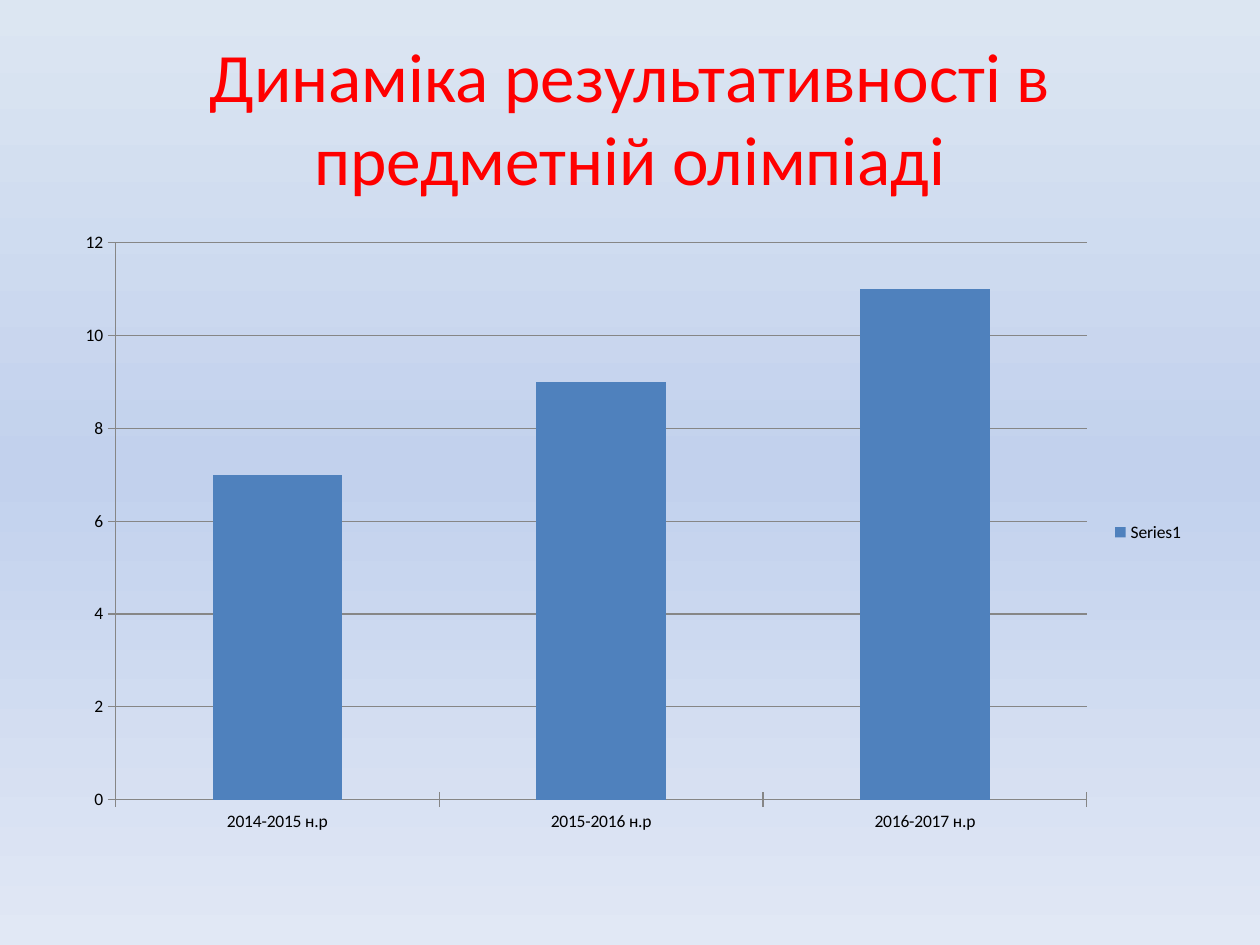
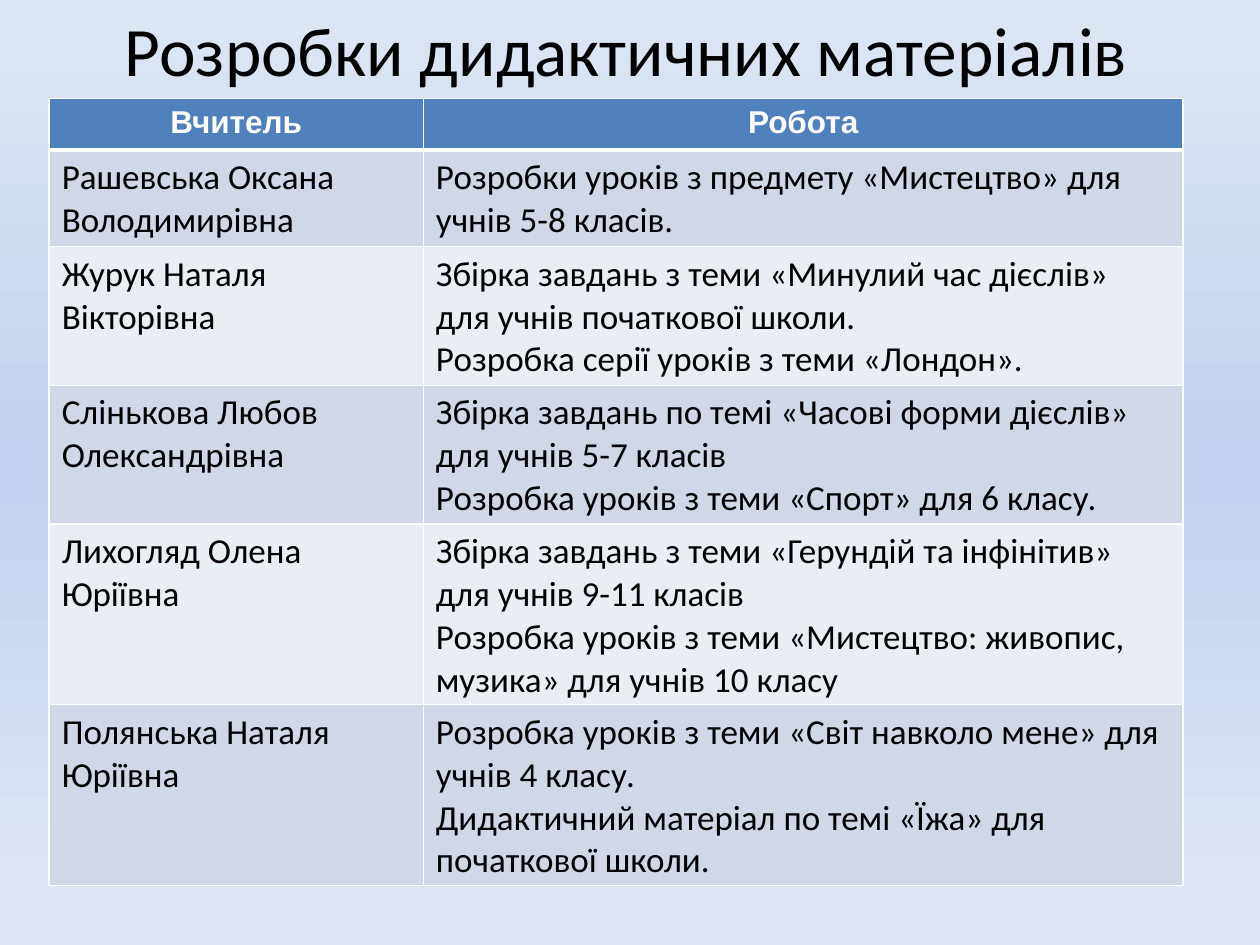
from copy import deepcopy
from dataclasses import dataclass

from lxml import etree
from pptx import Presentation
from pptx.chart.data import CategoryChartData
from pptx.dml.color import RGBColor
from pptx.enum.chart import XL_CHART_TYPE, XL_LEGEND_POSITION, XL_TICK_MARK
from pptx.enum.text import MSO_ANCHOR, PP_ALIGN
from pptx.oxml.ns import qn
from pptx.slide import Slide
from pptx.table import _Cell
from pptx.text.text import TextFrame
from pptx.util import Inches, Pt

COLUMN_CLUSTERED = XL_CHART_TYPE.COLUMN_CLUSTERED
LEGEND_RIGHT = XL_LEGEND_POSITION.RIGHT
TICK_CROSS = XL_TICK_MARK.CROSS
MIDDLE = MSO_ANCHOR.MIDDLE
LEFT, CENTER = PP_ALIGN.LEFT, PP_ALIGN.CENTER

BLACK = RGBColor(0x00, 0x00, 0x00)
WHITE = RGBColor(0xFF, 0xFF, 0xFF)
RED = RGBColor(0xFF, 0x00, 0x00)
BLUE = RGBColor(0x4F, 0x81, 0xBD)
AXIS_GREY = RGBColor(0x86, 0x86, 0x86)
BAND_DARK = RGBColor(0xD0, 0xD8, 0xE8)
BAND_LIGHT = RGBColor(0xE9, 0xED, 0xF4)
BACKGROUND_STOPS = (
    (0, RGBColor(0xDC, 0xE6, 0xF2)),
    (50, RGBColor(0xC2, 0xD1, 0xED)),
    (100, RGBColor(0xE1, 0xE8, 0xF5)),
)


@dataclass(frozen=True)
class Box:
    left: float
    top: float
    width: float
    height: float

    def lengths(self) -> tuple:
        return tuple(map(Inches, (self.left, self.top, self.width, self.height)))


@dataclass(frozen=True)
class TextStyle:
    size: float
    color: RGBColor
    font: str = "Calibri"
    bold: bool = False
    align: PP_ALIGN = LEFT


@dataclass(frozen=True)
class TeacherWork:
    teacher: str
    works: tuple[str, ...]


HEADER_STYLE = TextStyle(18, WHITE, "Arial", True, CENTER)
BODY_STYLE = TextStyle(20, BLACK)

RESULTS = {"2014-2015 н.р": 7, "2015-2016 н.р": 9, "2016-2017 н.р": 11}

TEACHER_WORKS = (
    TeacherWork("Рашевська Оксана Володимирівна", (
        "Розробки уроків з предмету «Мистецтво» для учнів 5-8 класів.",
    )),
    TeacherWork("Журук Наталя Вікторівна", (
        "Збірка завдань з теми «Минулий час дієслів» для учнів початкової школи.",
        "Розробка серії уроків з теми «Лондон».",
    )),
    TeacherWork("Слінькова Любов Олександрівна", (
        "Збірка завдань по темі «Часові форми дієслів» для учнів 5-7 класів",
        "Розробка уроків з теми «Спорт» для 6 класу.",
    )),
    TeacherWork("Лихогляд Олена Юріївна", (
        "Збірка завдань з теми «Герундій та інфінітив» для учнів 9-11 класів",
        "Розробка уроків з теми «Мистецтво: живопис, музика» для учнів 10 класу",
    )),
    TeacherWork("Полянська Наталя Юріївна", (
        "Розробка уроків з теми «Світ навколо мене» для учнів 4 класу.",
        "Дидактичний матеріал по темі «Їжа» для початкової школи.",
    )),
)


def write_text(tf: TextFrame, paragraphs: tuple[str, ...], style: TextStyle) -> None:
    tf.word_wrap = True
    for i, text in enumerate(paragraphs):
        p = tf.paragraphs[0] if i == 0 else tf.add_paragraph()
        p.alignment = style.align
        r = p.add_run()
        r.text = text
        r.font.name = style.font
        r.font.size = Pt(style.size)
        r.font.bold = style.bold
        r.font.color.rgb = style.color


def paint_background(slide: Slide) -> None:
    fill = slide.background.fill
    fill.gradient()
    fill.gradient_angle = 270
    stop_list = next(slide.element.iter(qn("a:gsLst")))
    stop_list.append(deepcopy(stop_list[-1]))
    for stop, (position, color) in zip(fill.gradient_stops, BACKGROUND_STOPS):
        stop.position = position / 100
        stop.color.rgb = color


def add_titled_slide(prs: Presentation, title: str, box: Box, color: RGBColor) -> Slide:
    slide = prs.slides.add_slide(prs.slide_layouts[6])
    paint_background(slide)
    tf = slide.shapes.add_textbox(*box.lengths()).text_frame
    tf.vertical_anchor = MIDDLE
    write_text(tf, (title,), TextStyle(39.6, color, align=CENTER))
    return slide


def add_results_chart(slide: Slide, box: Box) -> None:
    data = CategoryChartData()
    data.categories = RESULTS.keys()
    data.add_series("Series1", RESULTS.values())
    chart = slide.shapes.add_chart(COLUMN_CLUSTERED, *box.lengths(), data).chart
    chart.has_title = False
    chart.font.name = "Calibri"
    chart.font.size = Pt(10)
    chart.font.color.rgb = BLACK
    chart.has_legend = True
    chart.legend.position = LEGEND_RIGHT
    chart.legend.include_in_layout = False

    plot = chart.plots[0]
    plot.vary_by_categories = False
    plot.gap_width = 150
    bars = plot.series[0].format.fill
    bars.solid()
    bars.fore_color.rgb = BLUE

    value_axis = chart.value_axis
    value_axis.has_major_gridlines = True
    for axis in (chart.category_axis, value_axis):
        axis.major_tick_mark = TICK_CROSS
    for part in (chart.category_axis, value_axis, value_axis.major_gridlines):
        part.format.line.color.rgb = AXIS_GREY
        part.format.line.width = Pt(0.75)


def set_borders(cell: _Cell, top: float, bottom: float) -> None:
    properties = cell._tc.get_or_add_tcPr()
    widths = {"lnL": 1, "lnR": 1, "lnT": top, "lnB": bottom}
    for i, (side, width) in enumerate(widths.items()):
        line = etree.Element(qn(f"a:{side}"), w=str(Pt(width)))
        fill = etree.SubElement(line, qn("a:solidFill"))
        etree.SubElement(fill, qn("a:srgbClr"), val=str(WHITE))
        properties.insert(i, line)


def add_works_table(slide: Slide, box: Box) -> None:
    rows = [(("Вчитель",), ("Робота",))]
    rows += [((work.teacher,), work.works) for work in TEACHER_WORKS]
    frame = slide.shapes.add_table(len(rows), 2, *box.lengths())
    table = frame.table
    for column, width in zip(table.columns, (2.97, 6.03)):
        column.width = Inches(width)
    for i, row in enumerate(rows):
        table.rows[i].height = Inches(0.41)
        style = BODY_STYLE if i else HEADER_STYLE
        color = (BAND_LIGHT, BAND_DARK)[i % 2] if i else BLUE
        for j, paragraphs in enumerate(row):
            cell = table.cell(i, j)
            cell.fill.solid()
            cell.fill.fore_color.rgb = color
            set_borders(cell, top=3 if i == 1 else 1, bottom=3 if i == 0 else 1)
            write_text(cell.text_frame, paragraphs, style)
    frame.height = Inches(box.height)


def main() -> None:
    prs = Presentation()
    prs.slide_width, prs.slide_height = Inches(10), Inches(7.5)

    results = add_titled_slide(
        prs, "Динаміка результативності в предметній олімпіаді",
        Box(0.5, 0.3, 9, 1.25), RED)
    add_results_chart(results, Box(0.5, 1.75, 9, 4.95))

    materials = add_titled_slide(
        prs, "Розробки дидактичних матеріалів", Box(0.47, 0, 9, 0.78), BLACK)
    add_works_table(materials, Box(0.39, 0.78, 9, 6.24))

    prs.save("out.pptx")


if __name__ == "__main__":
    main()
